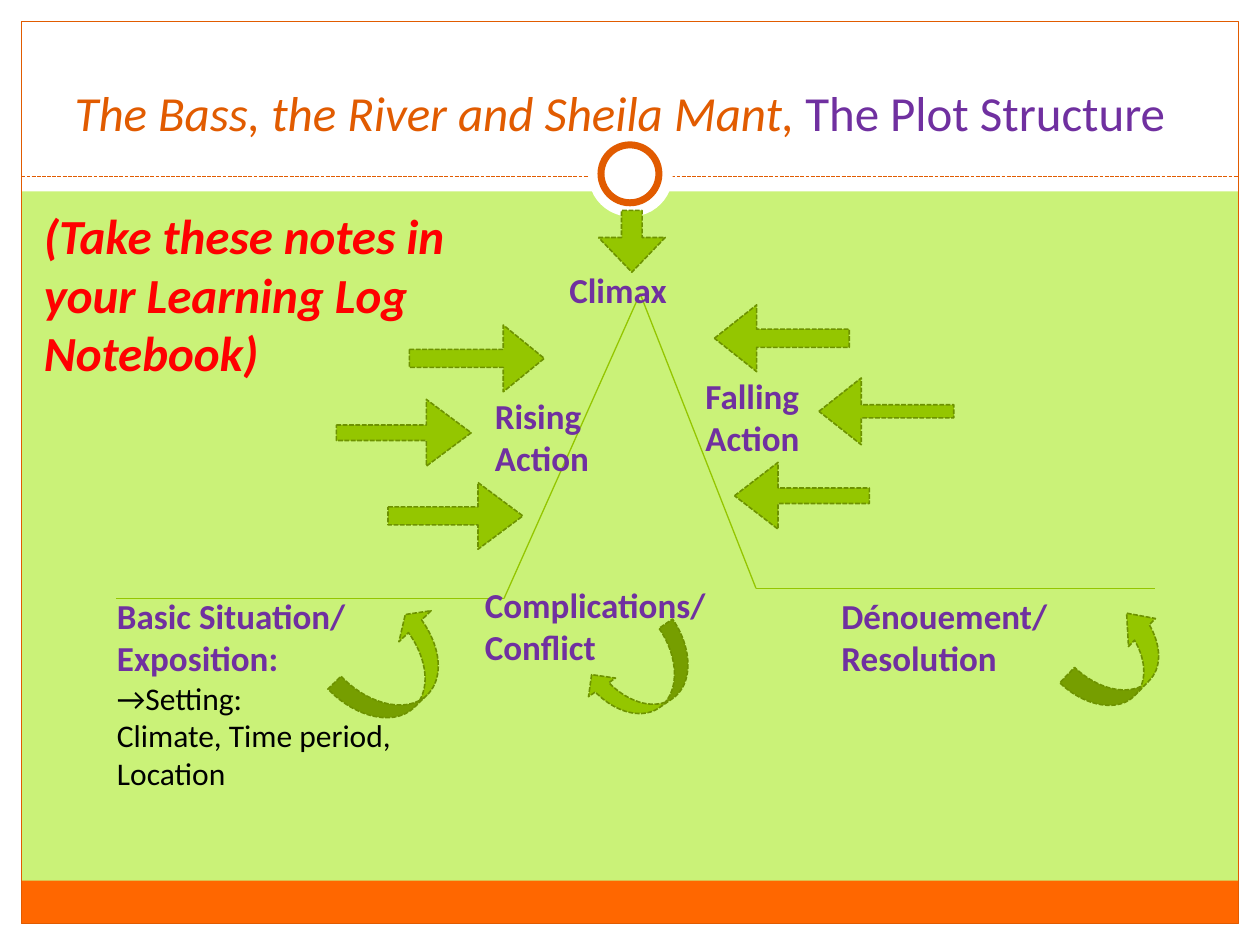
import dataclasses

import lxml.etree
import pptx
import pptx.dml.color
import pptx.enum.dml
import pptx.enum.shapes
import pptx.enum.text
import pptx.oxml.ns
import pptx.util

Inches = pptx.util.Inches
SHAPE = pptx.enum.shapes.MSO_SHAPE


@dataclasses.dataclass(frozen=True)
class Theme:
    """Colours, font and type sizes of the slide."""
    font: str = "Calibri"
    ground: str = "CAF278"
    white: str = "FFFFFF"
    black: str = "000000"
    band: str = "FF6700"
    accent: str = "E15B00"
    purple: str = "7030A0"
    red: str = "FF0000"
    green: str = "94C600"
    dark_green: str = "6D9200"
    title: int = 28
    label: int = 20
    detail: int = 18


@dataclasses.dataclass(frozen=True)
class Box:
    """A rectangle in inches."""
    left: float
    top: float
    width: float
    height: float

    def inner(self, left, top, width, height):
        """Return a box placed relative to this one."""
        return Box(self.left + left, self.top + top, width, height)

    def lengths(self):
        """Return left, top, width and height as lengths."""
        return [Inches(value) for value in dataclasses.astuple(self)]


THEME = Theme()


def color(code):
    """Turn a hex code into a colour."""
    return pptx.dml.color.RGBColor.from_string(code)


def set_line(line, code, width, dashed=False):
    """Give a line its colour, width and dash."""
    line.color.rgb = color(code)
    line.width = pptx.util.Pt(width)
    if dashed:
        line.dash_style = pptx.enum.dml.MSO_LINE.SQUARE_DOT


def add_shape(page, kind, box, fill=None, line=None, width=0.75, dashed=False):
    """Add a preset shape without shadow."""
    shape = page.shapes.add_shape(kind, *box.lengths())
    shape.shadow.inherit = False
    if fill:
        shape.fill.solid()
        shape.fill.fore_color.rgb = color(fill)
    else:
        shape.fill.background()
    if line:
        set_line(shape.line, line, width, dashed)
    else:
        shape.line.fill.background()
    return shape


def add_line(page, box, start, end, code, dashed=False):
    """Add a straight line between two points of the box."""
    ends = [Inches(value) for value in (box.left + start[0], box.top + start[1],
                                        box.left + end[0], box.top + end[1])]
    line = page.shapes.add_connector(pptx.enum.shapes.MSO_CONNECTOR.STRAIGHT, *ends)
    set_line(line.line, code, 0.75, dashed)
    properties = line.element.find(pptx.oxml.ns.qn("p:spPr"))
    lxml.etree.SubElement(properties, pptx.oxml.ns.qn("a:effectLst"))


def format_span(span, size, code, bold=False, italic=False):
    """Format one run of text."""
    span.font.name = THEME.font
    span.font.size = pptx.util.Pt(size)
    span.font.color.rgb = color(code)
    span.font.bold = bold
    span.font.italic = italic


def add_text(page, box, text, size, code, italic=False):
    """Add a bold wrapped text box and return its paragraphs."""
    frame = page.shapes.add_textbox(*box.lengths()).text_frame
    frame.word_wrap = True
    frame.auto_size = pptx.enum.text.MSO_AUTO_SIZE.SHAPE_TO_FIT_TEXT
    frame.text = text
    for para in frame.paragraphs:
        format_span(para.runs[0], size, code, True, italic)
    return frame.paragraphs


def add_frame(page, box):
    """Add the margins, header, footer band, border and ring."""
    margin = 0.17
    inner_width, inner_height = box.width - 2 * margin, box.height - 2 * margin
    for part in ((0, box.height - margin, box.width, margin),
                 (0, 0, box.width, 1.52),
                 (0, 0, margin, box.height),
                 (box.width - margin, 0, margin, box.height)):
        add_shape(page, SHAPE.RECTANGLE, box.inner(*part), THEME.white)
    add_shape(page, SHAPE.RECTANGLE, box.inner(margin, 6.99, inner_width, 0.34), THEME.band)
    add_shape(page, SHAPE.RECTANGLE, box.inner(margin, margin, inner_width, inner_height),
              line=THEME.accent)
    add_line(page, box, (margin, 1.4), (box.width - margin, 1.4), THEME.accent, True)
    add_shape(page, SHAPE.OVAL, box.inner(4.67, 1.05, 0.67, 0.67), THEME.white)
    add_shape(page, SHAPE.OVAL, box.inner(4.77, 1.15, 0.46, 0.46), THEME.white, THEME.accent, 4)


def add_title(page, box):
    """Fill the title placeholder and bring it in front of the frame."""
    title = page.shapes.title
    title.left, title.top, title.width, title.height = box.lengths()
    title.element.getparent().append(title.element)
    frame = title.text_frame
    frame.auto_size = pptx.enum.text.MSO_AUTO_SIZE.NONE
    frame.word_wrap = True
    frame.vertical_anchor = pptx.enum.text.MSO_ANCHOR.BOTTOM
    para = frame.paragraphs[0]
    para.alignment = pptx.enum.text.PP_ALIGN.CENTER
    for text, code, italic in (("The Bass, the River and Sheila Mant, ", THEME.accent, True),
                               ("The Plot Structure", THEME.purple, False)):
        span = para.add_run()
        span.text = text
        format_span(span, THEME.title, code, italic=italic)


def add_plot_line(page, box):
    """Draw the plot line from exposition to resolution."""
    points = ((0.92, 4.75), (4, 4.75), (5.08, 2.33), (6, 4.67), (9.17, 4.67))
    for start, end in zip(points, points[1:]):
        add_line(page, box, start, end, THEME.green)


def add_labels(page, box):
    """Name the stages of the plot."""
    exposition = add_text(
        page, box.inner(0.83, 4.67, 2.75, 1.99),
        "Basic Situation/\nExposition:\n→Setting:\nClimate, Time period, Location",
        THEME.label, THEME.purple)
    for para in exposition[2:]:
        format_span(para.runs[0], THEME.detail, THEME.black)
    for text, place in (("Complications/\nConflict", (3.75, 4.58, 2.17, 0.77)),
                        ("Rising Action", (3.83, 3.08, 1.5, 0.77)),
                        ("Climax", (4.42, 2.08, 1.25, 0.44)),
                        ("Falling Action", (5.5, 2.92, 1.42, 0.77)),
                        ("Dénouement/ Resolution", (6.58, 4.67, 2.33, 0.77))):
        add_text(page, box.inner(*place), text, THEME.label, THEME.purple)


def add_arrows(page, box):
    """Add the curved and straight arrows around the plot line."""
    right, left = SHAPE.RIGHT_ARROW, SHAPE.LEFT_ARROW
    size = (1.07, 0.53)
    for kind, place, adjustments, rotation in (
            (SHAPE.CURVED_UP_ARROW, (2.66, 5.03, 1.03, 0.58), (0.25, 0.612, 0.208), 316.1),
            (SHAPE.CURVED_RIGHT_ARROW, (8.66, 4.8, 0.5, 0.92), (0.339, 0.616, 0.388), 223.8),
            (SHAPE.CURVED_LEFT_ARROW, (4.85, 4.93, 0.52, 0.91), (), 55.5),
            (right, (3.25, 2.58, *size), (0.271, 0.614), 0),
            (right, (3.08, 3.83, *size), (0.271, 0.672), 0),
            (right, (2.67, 3.17, *size), (0.233, 0.672), 0),
            (left, (6.5, 3, *size), (0.195, 0.633), 0),
            (left, (5.83, 3.67, *size), (0.233, 0.652), 0),
            (left, (5.67, 2.42, *size), (0.271, 0.633), 0),
            (SHAPE.DOWN_ARROW, (4.75, 1.67, 0.53, 0.49), (0.309, 0.562), 0)):
        arrow = add_shape(page, kind, box.inner(*place), THEME.green, THEME.dark_green, 0.9, True)
        arrow.rotation = rotation
        for index, value in enumerate(adjustments):
            arrow.adjustments[index] = value


def main():
    """Build the slide and save it."""
    deck = pptx.Presentation()
    deck.slide_width, deck.slide_height = Inches(10), Inches(7.5)
    page = deck.slides.add_slide(deck.slide_layouts[5])
    page.background.fill.solid()
    page.background.fill.fore_color.rgb = color(THEME.ground)
    whole = Box(0, 0, 10, 7.5)
    add_frame(page, whole)
    add_title(page, whole.inner(0.42, 0.25, 9, 0.92))
    add_plot_line(page, whole)
    add_labels(page, whole)
    add_arrows(page, whole)
    add_text(page, whole.inner(0.25, 1.58, 4, 1.51),
             "(Take these notes in your Learning Log Notebook)", THEME.title, THEME.red, True)
    deck.save("out.pptx")


if __name__ == "__main__":
    main()
